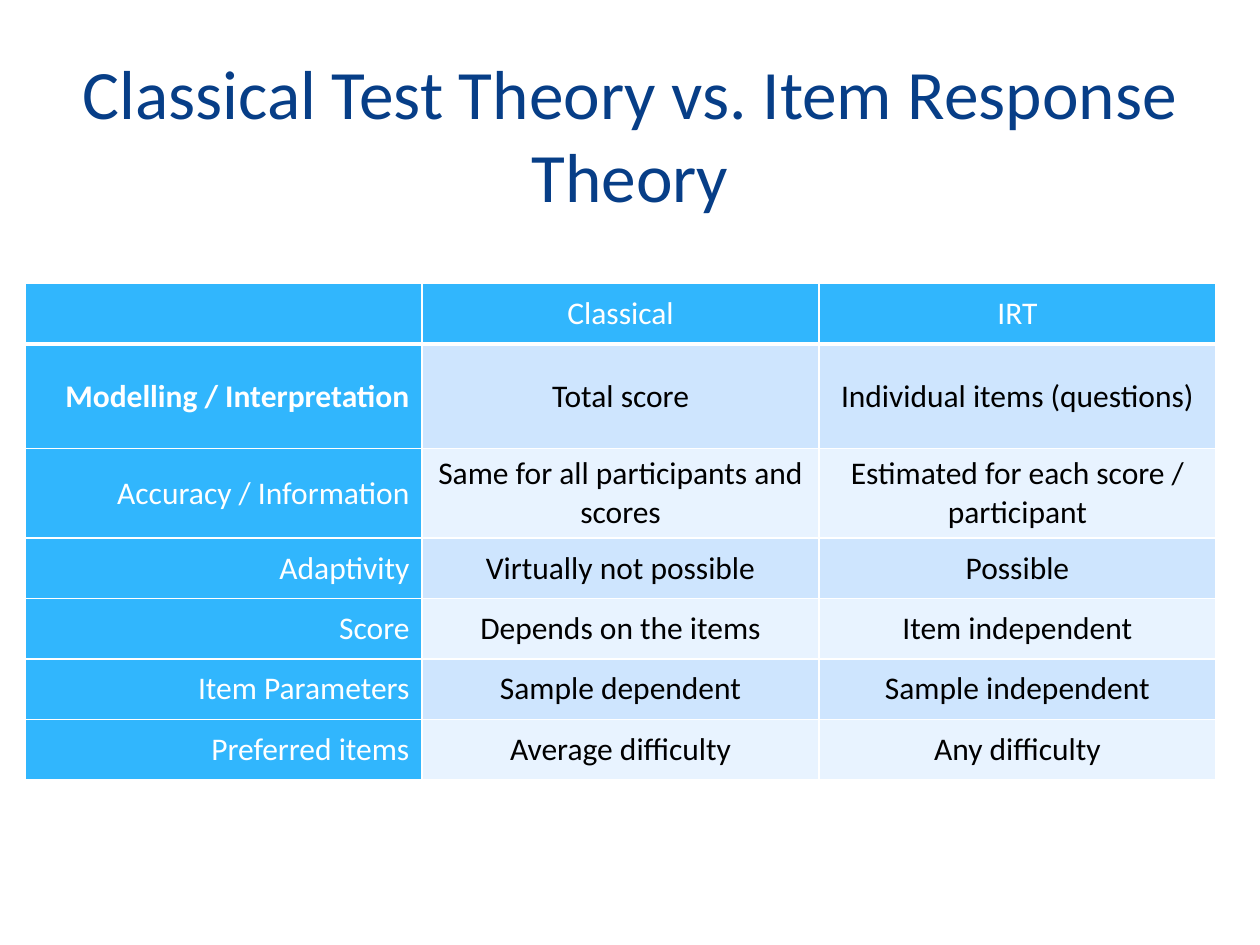
from dataclasses import dataclass
from lxml.etree import SubElement
from pptx import Presentation
from pptx.dml.color import RGBColor
from pptx.enum.text import MSO_ANCHOR, PP_ALIGN
from pptx.oxml.ns import qn
from pptx.util import Inches, Pt

# Content
HEADING = "Classical Test Theory vs. Item Response Theory"
COMPARISON = [
    ("", "Classical", "IRT"),
    ("Modelling / Interpretation", "Total score", "Individual items (questions)"),
    ("Accuracy / Information", "Same for all participants and scores",
     "Estimated for each score / participant"),
    ("Adaptivity", "Virtually not possible", "Possible"),
    ("Score", "Depends on the items", "Item independent"),
    ("Item Parameters", "Sample dependent", "Sample independent"),
    ("Preferred items", "Average difficulty", "Any difficulty"),
]
EMPHASISED = "Modelling / Interpretation"


@dataclass(frozen=True)
class Theme:
    font: str = "Calibri"
    heading_size: float = 39.6
    table_size: float = 18
    heading: str = "073E87"
    header_fill: str = "31B6FD"
    header_text: str = "FFFFFF"
    body_text: str = "000000"
    bands: tuple = ("E8F3FF", "CEE5FE")
    rule: str = "FFFFFF"
    rule_width: float = 1
    header_rule_width: float = 3


THEME = Theme()

# Grid, in inches
SLIDE_W, SLIDE_H = 10, 7.5
HEADING_BOX = (0.5, 0.37, 9, 1.37)
TABLE_LEFT, TABLE_TOP, COLUMN_W = 0.2, 2.25, 3.15
ROW_H = 0.48
TALL_ROWS = {1: 0.83, 2: 0.71}


def style(paragraph, size, color, align, bold=False):
    paragraph.alignment = align
    font = paragraph.font
    font.name, font.size, font.bold = THEME.font, Pt(size), bold
    font.color.rgb = RGBColor.from_string(color)


def rule_cell(cell, bottom_width):
    properties = cell._tc.get_or_add_tcPr()
    for side in "LRTB":
        width = bottom_width if side == "B" else THEME.rule_width
        line = SubElement(properties, qn(f"a:ln{side}"), w=str(Pt(width)))
        fill = SubElement(line, qn("a:solidFill"))
        SubElement(fill, qn("a:srgbClr"), val=THEME.rule)


def add_heading(slide):
    frame = slide.shapes.add_textbox(*map(Inches, HEADING_BOX)).text_frame
    frame.word_wrap = True
    frame.vertical_anchor = MSO_ANCHOR.MIDDLE
    frame.text = HEADING
    style(frame.paragraphs[0], THEME.heading_size, THEME.heading, PP_ALIGN.CENTER)


def add_comparison(slide):
    heights = [TALL_ROWS.get(r, ROW_H) for r in range(len(COMPARISON))]
    columns = len(COMPARISON[0])
    table = slide.shapes.add_table(
        len(heights), columns, Inches(TABLE_LEFT), Inches(TABLE_TOP),
        Inches(columns * COLUMN_W), Inches(sum(heights))).table
    table.first_col = True
    for column in table.columns:
        column.width = Inches(COLUMN_W)

    for r, (height, entries) in enumerate(zip(heights, COMPARISON)):
        table.rows[r].height = Inches(height)
        for c, entry in enumerate(entries):
            cell = table.cell(r, c)
            is_header = r == 0 or c == 0
            rule_cell(cell, THEME.rule_width if r else THEME.header_rule_width)
            cell.fill.solid()
            cell.fill.fore_color.rgb = RGBColor.from_string(
                THEME.header_fill if is_header else THEME.bands[r % 2])
            cell.vertical_anchor = MSO_ANCHOR.MIDDLE
            cell.text = entry
            style(cell.text_frame.paragraphs[0], THEME.table_size,
                  THEME.header_text if is_header else THEME.body_text,
                  PP_ALIGN.RIGHT if r and c == 0 else PP_ALIGN.CENTER,
                  bold=entry == EMPHASISED)


def main():
    deck = Presentation()
    deck.slide_width, deck.slide_height = Inches(SLIDE_W), Inches(SLIDE_H)
    slide = deck.slides.add_slide(deck.slide_layouts[6])
    add_heading(slide)
    add_comparison(slide)
    deck.save("out.pptx")


if __name__ == "__main__":
    main()
